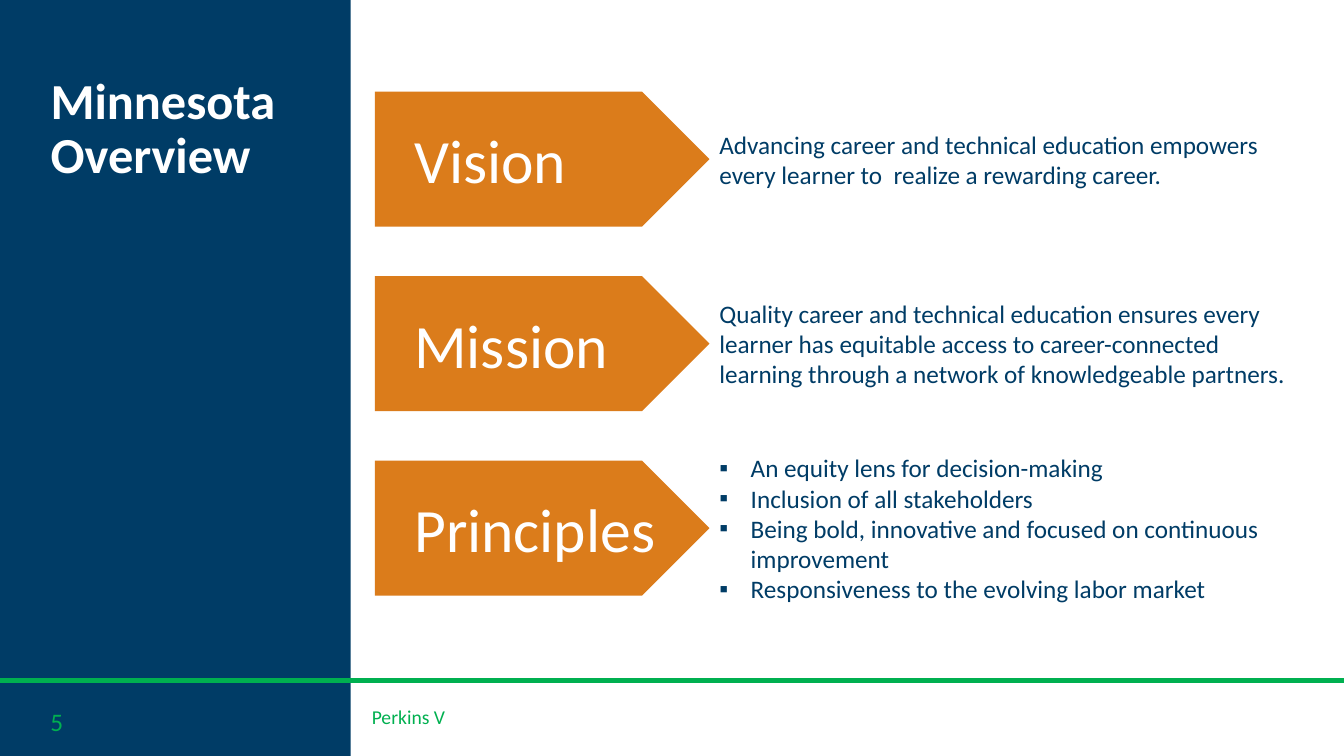
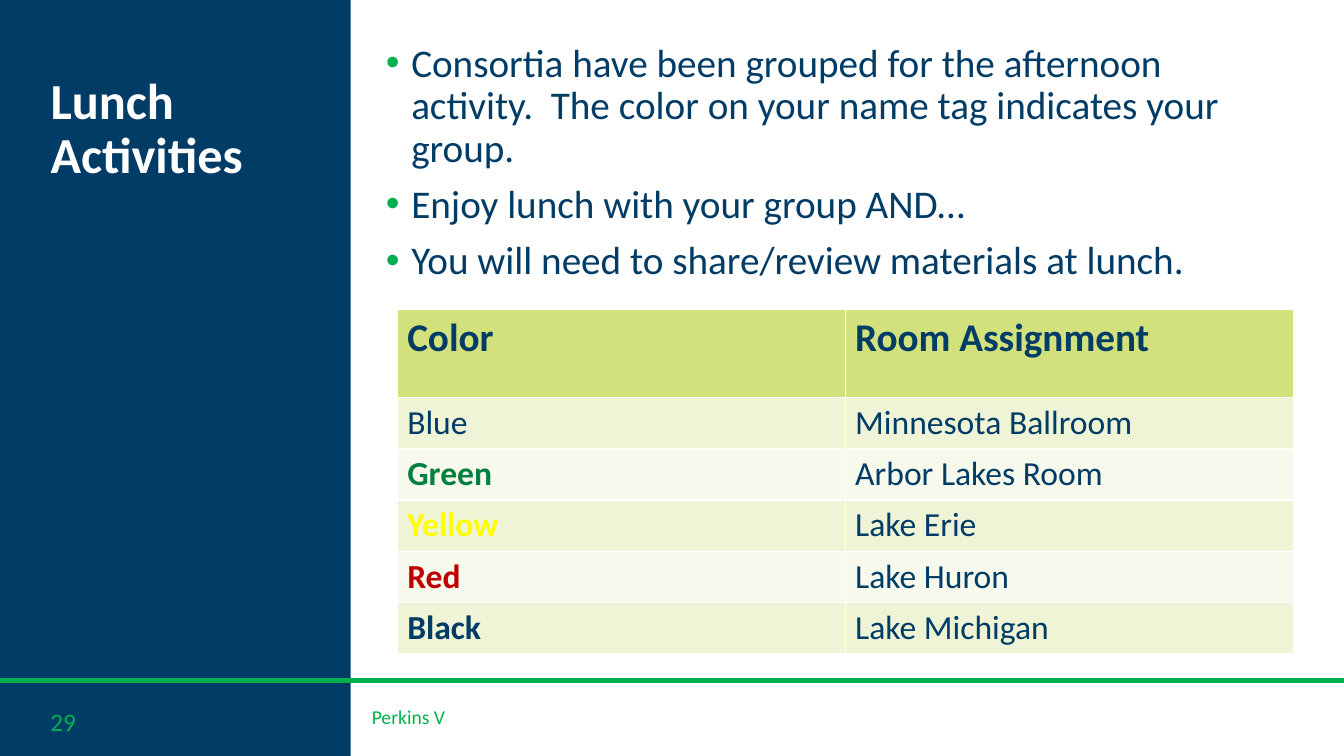
import pptx
import pptx.util
import pptx.dml.color
import pptx.enum.shapes
import pptx.enum.text
import pptx.oxml
import pptx.oxml.ns
from lxml import etree

Cm = pptx.util.Cm
Pt = pptx.util.Pt
ANCHOR = pptx.enum.text.MSO_ANCHOR
SHAPE = pptx.enum.shapes.MSO_SHAPE
qn = pptx.oxml.ns.qn

FACE = "Calibri"
NAVY, GREEN, WHITE, AMBER = "003C66", "00B050", "FFFFFF", "DB7C1B"
HEAD, DARK, PALE = "D3E17D", "EFF4D7", "F7F9EC"
WIDE, TALL = 33.87, 19.05
SIDE, RULE = 8.84, 17.15


def paint(part, color):
    if hasattr(part, "solid"):
        part.solid()
        part = part.fore_color
    part.rgb = pptx.dml.color.RGBColor.from_string(color)


def style(para, size, color, bold=False):
    font = para.font
    font.name, font.size, font.bold = FACE, Pt(size), bold
    paint(font.color, color)


def bullet(para, mark, indent, color):
    props = para._p.get_or_add_pPr()
    props.set("marL", str(Cm(indent)))
    props.set("indent", str(-Cm(indent)))
    tint = etree.SubElement(props, qn("a:buClr"))
    etree.SubElement(tint, qn("a:srgbClr")).set("val", color)
    etree.SubElement(props, qn("a:buFont")).set("typeface", "Arial")
    etree.SubElement(props, qn("a:buChar")).set("char", mark)


def place(shape, box):
    shape.left, shape.top, shape.width, shape.height = map(Cm, box)


def write(frame, lines, size, color, bold=False, mark=None, indent=0, tint=NAVY):
    frame.word_wrap = True
    for i, line in enumerate(lines):
        para = frame.add_paragraph() if i else frame.paragraphs[0]
        para.text = line
        if mark:
            bullet(para, mark, indent, tint)
        para.alignment = pptx.enum.text.PP_ALIGN.LEFT
        style(para, size, color, bold)


def label(slide, box, lines, size, color, anchor=ANCHOR.TOP, **marks):
    frame = slide.shapes.add_textbox(*map(Cm, box)).text_frame
    frame.vertical_anchor = anchor
    write(frame, lines, size, color, **marks)
    return frame


def block(slide, kind, box, color):
    shape = slide.shapes.add_shape(kind, *map(Cm, box))
    shape.shadow.inherit = False
    paint(shape.fill, color)
    shape.line.fill.background()
    return shape


def fill_master(deck, slide):
    block(slide, SHAPE.RECTANGLE, (0, 0, SIDE, TALL), NAVY)
    foot = label(slide, (9.12, 17.65, 10.44, 1.02), ["Perkins V"], 14, GREEN)
    foot.margin_right = 0
    line = slide.shapes.add_connector(
        pptx.enum.shapes.MSO_CONNECTOR.STRAIGHT, Cm(WIDE), Cm(RULE), 0, Cm(RULE))
    paint(line.line.fill, GREEN)
    line.line.width = Pt(3)
    etree.SubElement(line.element.spPr, qn("a:effectLst"))
    parts = [s for s in slide.shapes if not s.is_placeholder]
    for i, part in enumerate(parts):
        part.element.xpath(".//p:cNvPr")[0].set("id", str(20 + i))
        deck.slide_master.shapes.element.insert(2 + i, part.element)


def fill_side(slide, title, number):
    head = slide.shapes.title
    place(head, (1.02, 1.78, 7.85, 5.08))
    frame = head.text_frame
    frame.auto_size = pptx.enum.text.MSO_AUTO_SIZE.NONE
    frame.vertical_anchor = ANCHOR.TOP
    write(frame, [title], 36, WHITE, bold=True)
    frame.paragraphs[0].line_spacing = 0.9
    label(slide, (1.02, 17.68, 5.51, 1.02), [number], 18, GREEN)


def add_row(slide, box, name, lines, **marks):
    left, top, width, height = box
    arrow = block(slide, SHAPE.PENTAGON, (left, top, 8.43, height), AMBER)
    frame = arrow.text_frame
    frame.margin_left, frame.margin_right = Cm(0.99), 0
    frame.vertical_anchor = ANCHOR.MIDDLE
    write(frame, [name], 44, WHITE)
    label(slide, (left + 8.43, top - 0.4, width - 8.43, height + 0.8),
          lines, 18, NAVY, ANCHOR.MIDDLE, **marks)


def add_list(slide, box, lines):
    body = slide.placeholders[1]
    place(body, box)
    frame = body.text_frame
    frame.auto_size = pptx.enum.text.MSO_AUTO_SIZE.NONE
    write(frame, lines, 28, NAVY, mark="•", indent=0.64, tint=GREEN)
    for i, para in enumerate(frame.paragraphs):
        para.line_spacing = 0.9
        para.space_before = Pt(10 if i else 0)


def add_grid(slide, box, heads, rows):
    left, top, width, height = box
    first = 2.22
    grid = slide.shapes.add_table(len(rows) + 1, 2, *map(Cm, box)).table
    for col in grid.columns:
        col.width = Cm(width / 2)
    for i, row in enumerate(grid.rows):
        row.height = Cm((height - first) / len(rows) if i else first)
    for col, text in enumerate(heads):
        cell = grid.cell(0, col)
        paint(cell.fill, HEAD)
        write(cell.text_frame, [text], 28, NAVY, bold=True)
    for i, (name, color, bold, room) in enumerate(rows, 1):
        pair = (name, color, bold), (room, NAVY, False)
        for col, (text, ink, heavy) in enumerate(pair):
            cell = grid.cell(i, col)
            paint(cell.fill, DARK if i % 2 else PALE)
            write(cell.text_frame, [text], 24, ink, bold=heavy)


def main():
    deck = pptx.Presentation()
    deck.slide_width, deck.slide_height = Cm(WIDE), Cm(TALL)

    slide = deck.slides.add_slide(deck.slide_layouts[5])
    fill_master(deck, slide)
    fill_side(slide, "Minnesota Overview", "5")
    goals = [
        ("Vision", ["Advancing career and technical education empowers "
                    "every learner to  realize a rewarding career."], {}),
        ("Mission", ["Quality career and technical education ensures every "
                     "learner has equitable access to career-connected "
                     "learning through a network of knowledgeable partners."], {}),
        ("Principles", ["An equity lens for decision-making",
                        "Inclusion of all stakeholders",
                        "Being bold, innovative and focused on continuous improvement",
                        "Responsiveness to the evolving labor market"],
         {"mark": "▪", "indent": 0.79}),
    ]
    for i, (name, lines, marks) in enumerate(goals):
        add_row(slide, (9.45, 2.31 + 4.65 * i, 23.34, 3.4), name, lines, **marks)

    slide = deck.slides.add_slide(deck.slide_layouts[1])
    fill_side(slide, "Lunch Activities", "29")
    add_list(slide, (9.47, 0.97, 23.11, 14.78), [
        "Consortia have been grouped for the afternoon activity.  "
        "The color on your name tag indicates your group.",
        "Enjoy lunch with your group AND…",
        "You will need to share/review materials at lunch.",
    ])
    add_grid(slide, (10.01, 7.8, 22.58, 8.67), ("Color", "Room Assignment"), [
        ("Blue", NAVY, False, "Minnesota Ballroom"),
        ("Green", "00803E", True, "Arbor Lakes Room"),
        ("Yellow", "FFFF00", True, "Lake Erie"),
        ("Red", "C00000", True, "Lake Huron"),
        ("Black", NAVY, True, "Lake Michigan"),
    ])
    deck.save("out.pptx")


if __name__ == "__main__":
    main()
